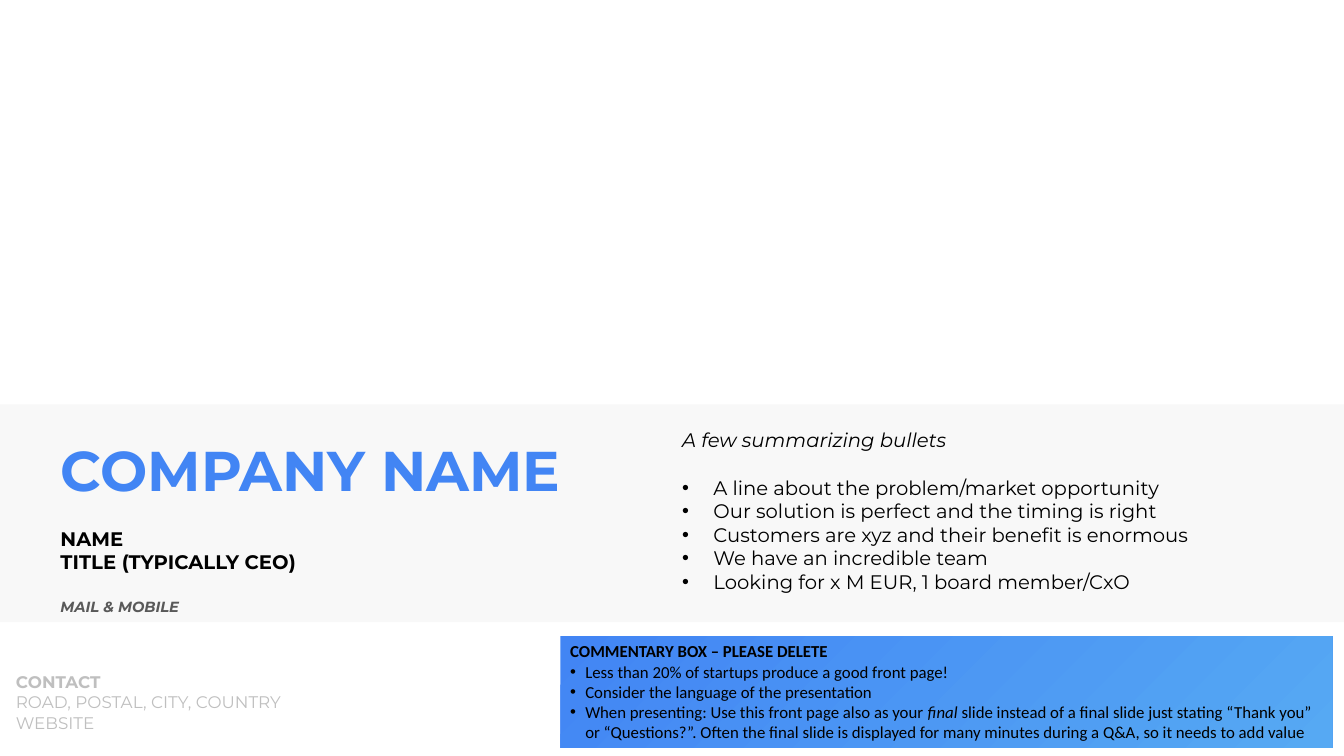
from pptx import Presentation
from pptx.dml.color import RGBColor
from pptx.enum.shapes import MSO_SHAPE as Shape
from pptx.enum.text import MSO_ANCHOR as Anchor, MSO_AUTO_SIZE as Fit, PP_ALIGN as Align
from pptx.oxml.ns import qn
from pptx.util import Cm, Pt
from lxml.etree import SubElement

BLUE = RGBColor(0x42, 0x85, 0xF4)
SKY = RGBColor(0x56, 0xA9, 0xF3)
BLACK = RGBColor(0, 0, 0)
GREY = RGBColor(0x59, 0x59, 0x59)
PALE = RGBColor(0xBF, 0xBF, 0xBF)
MIST = RGBColor(0xF2, 0xF2, 0xF2)

# Content: each line is (runs, left indent in cm, bulleted, space before in pt),
# each run is (text, format)
HEAD = {"size": 40, "bold": True, "color": BLUE}
ROLE = {"size": 14, "bold": True, "color": BLACK}
MAIL = {"size": 10.5, "bold": True, "italic": True, "color": GREY}
SUM = {"size": 14, "color": BLACK}
FOOT = {"size": 12, "color": PALE}
NOTE = {"size": 12, "color": BLACK, "name": "Calibri"}
BOLD = {"bold": True}
SLANT = {"italic": True}

points = [
    "A line about the problem/market opportunity",
    "Our solution is perfect and the timing is right",
    "Customers are xyz and their benefit is enormous",
    "We have an incredible team",
    "Looking for x M EUR, 1 board member/CxO",
]
title_lines = [
    ([("COMPANY NAME", HEAD)], 1.27, False, 0),
    ([("NAME", ROLE)], 1.27, False, 17),
    ([("TITLE (TYPICALLY CEO)", ROLE)], 1.27, False, 0),
    ([("MAIL & MOBILE", MAIL)], 1.27, False, 17),
]
foot_lines = [
    ([("CONTACT", FOOT | BOLD)], 1.27, False, 0),
    ([("ROAD, POSTAL, CITY, COUNTRY", FOOT)], 1.27, False, 0),
    ([("WEBSITE", FOOT)], 1.27, False, 0),
]
sum_lines = [([("A few summarizing bullets", SUM | SLANT)], 0, False, 0)] + [
    ([(text, SUM)], 0.79, True, 0 if i else 17) for i, text in enumerate(points)
]
note_lines = [
    ([("COMMENTARY BOX – PLEASE DELETE", NOTE | BOLD)], 0, False, 0),
    ([("Less than 20% of startups produce a good front page!", NOTE)], 0.38, True, 0),
    ([("Consider the language of the presentation", NOTE)], 0.38, True, 0),
    ([("When presenting: Use this front page also as your ", NOTE),
      ("final", NOTE | SLANT),
      (" slide instead of a final slide just stating “Thank you” or “Questions?”. "
       "Often the final slide is displayed for many minutes during a Q&A, "
       "so it needs to add value", NOTE)], 0.38, True, 0),
]

# Places: left, top, width, height in cm
BAND_AT = (0, 10.19, 33.87, 5.49)
TITLE_AT = (0, 10.85, 16.94, 4.8)
FOOT_AT = (-1.12, 16.81, 10.8, 1.8)
SUM_AT = (16.94, 10.67, 16.03, 4.45)
NOTE_AT = (14.12, 16.03, 19.46, 2.82)


def place(spot):
    return [Cm(n) for n in spot]


def style(font, form):
    for key, value in ({"name": "Montserrat", "bold": False, "italic": False} | form).items():
        if key == "color":
            font.color.rgb = value
        else:
            setattr(font, key, Pt(value) if key == "size" else value)


def write(shape, lines):
    frame = shape.text_frame
    frame.word_wrap = True
    frame.auto_size = Fit.NONE
    frame.vertical_anchor = Anchor.TOP
    for i, (runs, left, dot, gap) in enumerate(lines):
        para = frame.add_paragraph() if i else frame.paragraphs[0]
        props = para._p.get_or_add_pPr()
        props.set("marL", str(Cm(left)))
        props.set("indent", str(-Cm(left) if dot else 0))
        if dot:
            SubElement(props, qn("a:buFont")).set("typeface", "Arial")
            SubElement(props, qn("a:buChar")).set("char", "•")
        para.alignment = Align.LEFT
        para.space_before = Pt(gap)
        for text, form in runs:
            run = para.add_run()
            run.text = text
            style(run.font, form)


def add_rect(slide, spot):
    rect = slide.shapes.add_shape(Shape.RECTANGLE, *place(spot))
    rect.shadow.inherit = False
    rect.line.fill.background()
    return rect


deck = Presentation()
deck.slide_width, deck.slide_height = Cm(33.87), Cm(19.05)
slide = deck.slides.add_slide(deck.slide_layouts[5])

# Half-clear grey band
band = add_rect(slide, BAND_AT)
band.fill.solid()
band.fill.fore_color.rgb = MIST
tint = band._element.spPr.find(qn("a:solidFill"))[0]
SubElement(tint, qn("a:alpha")).set("val", "50000")

# Title, raised above the band
title = slide.shapes.title
title.left, title.top, title.width, title.height = place(TITLE_AT)
band._element.addnext(title._element)
write(title, title_lines)

# Contact and summary
for spot, lines in ((FOOT_AT, foot_lines), (SUM_AT, sum_lines)):
    write(slide.shapes.add_textbox(*place(spot)), lines)

# Comment box
note = add_rect(slide, NOTE_AT)
note.fill.gradient()
note.fill.gradient_angle = 315
for stop, shade in zip(note.fill.gradient_stops, (BLUE, SKY)):
    stop.color.rgb = shade
write(note, note_lines)

deck.save("out.pptx")
